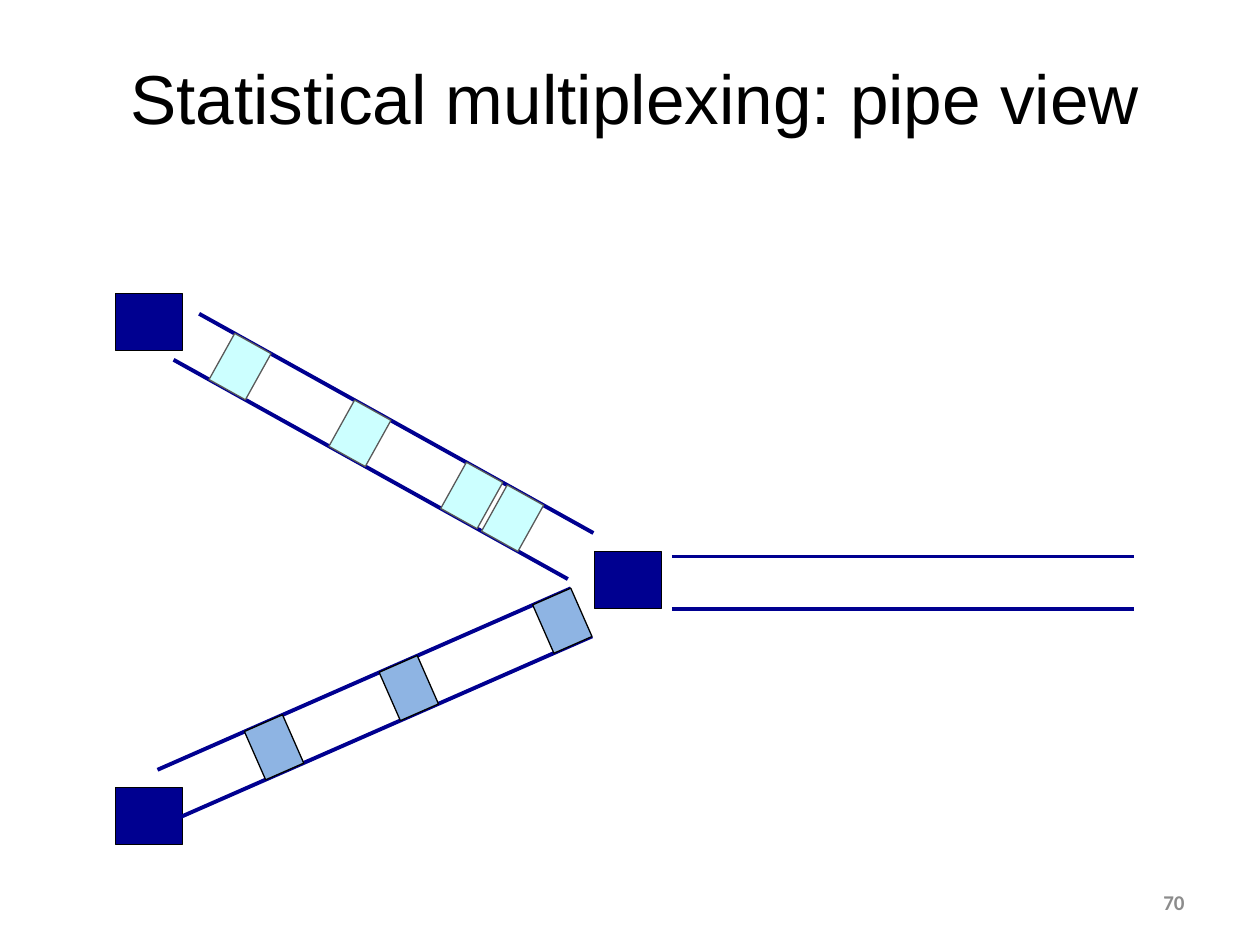
import math

import pptx
import pptx.util
import pptx.dml.color
import pptx.enum.shapes
import pptx.enum.text
import pptx.oxml.ns
from lxml import etree

Pt = pptx.util.Pt
ALIGN = pptx.enum.text.PP_ALIGN

COLORS = {
    "navy": "000090",
    "black": "000000",
    "cyan": "CCFFFF",
    "gray": "595959",
    "blue": "8EB4E3",
    "number": "8C8C8C",
}

# Content, in points
TITLE = "Statistical multiplexing: pipe view"
PAGE_NUMBER = "70"
NODE_SIZE = (38.4, 32.4)
NODES = [(339.6, 315.2), (66, 167.8), (66, 450)]
PACKET_SIZE = (23.8, 30.2)
# A pipe has two parallel walls; packets are distances along its middle.
PIPES = [
    dict(start=(113.8, 179.3), end=(339.1, 304.6), gap=(-14.6, 26.3),
         packets=[213.3, 186.6, 113.5, 35.1], fill="cyan", outline="gray"),
    dict(start=(90, 439.9), end=(326.2, 336.2), gap=(12.2, 27.4),
         packets=[66.1, 246, 150.2], fill="blue", outline="black"),
    dict(start=(384, 318), end=(642, 318), gap=(0, 30)),
    dict(start=(390, 318), end=(648, 318), gap=(0, 30)),
]


def rgb(name):
    return pptx.dml.color.RGBColor.from_string(COLORS[name])


def add_text(slide, text, left, top, width, height, *, size, font, color,
             align, bold=False):
    box = slide.shapes.add_textbox(Pt(left), Pt(top), Pt(width), Pt(height))
    frame = box.text_frame
    frame.word_wrap = True
    frame.vertical_anchor = pptx.enum.text.MSO_ANCHOR.MIDDLE
    paragraph = frame.paragraphs[0]
    paragraph.alignment = align
    run = paragraph.add_run()
    run.text = text
    run.font.size = Pt(size)
    run.font.name = font
    run.font.bold = bold
    run.font.color.rgb = rgb(color)


def add_block(shapes, left, top, size, fill, outline, rotation=0):
    block = shapes.add_shape(pptx.enum.shapes.MSO_SHAPE.RECTANGLE,
                             Pt(left), Pt(top), Pt(size[0]), Pt(size[1]))
    block.shadow.inherit = False
    block.fill.solid()
    block.fill.fore_color.rgb = rgb(fill)
    block.line.color.rgb = rgb(outline)
    block.line.width = Pt(0.75)
    block.rotation = rotation


def add_wall(shapes, x1, y1, x2, y2):
    wall = shapes.add_connector(pptx.enum.shapes.MSO_CONNECTOR.STRAIGHT,
                                Pt(x1), Pt(y1), Pt(x2), Pt(y2))
    wall.line.color.rgb = rgb("navy")
    wall.line.width = Pt(2.25)
    etree.SubElement(wall._element.spPr, pptx.oxml.ns.qn("a:effectLst"))


def add_pipe(slide, start, end, gap, packets=(), fill=None, outline=None):
    shapes = slide.shapes.add_group_shape().shapes
    (x1, y1), (x2, y2), (gap_x, gap_y) = start, end, gap
    for side in (0, 1):
        dx, dy = side * gap_x, side * gap_y
        add_wall(shapes, x1 + dx, y1 + dy, x2 + dx, y2 + dy)

    angle = math.atan2(y2 - y1, x2 - x1)
    width, height = PACKET_SIZE
    for distance in packets:
        center_x = x1 + gap_x / 2 + distance * math.cos(angle)
        center_y = y1 + gap_y / 2 + distance * math.sin(angle)
        add_block(shapes, center_x - width / 2, center_y - height / 2,
                  PACKET_SIZE, fill, outline, math.degrees(angle))


def main():
    deck = pptx.Presentation()
    deck.slide_width, deck.slide_height = Pt(720), Pt(540)
    slide = deck.slides.add_slide(deck.slide_layouts[6])

    # Title
    add_text(slide, TITLE, 36, 9.4, 653.8, 92.2, size=39.6, font="Arial",
             color="black", align=ALIGN.CENTER)

    # Nodes
    for left, top in NODES:
        add_block(slide.shapes, left, top, NODE_SIZE, "navy", "black")

    # Pipes with their packets
    for pipe in PIPES:
        add_pipe(slide, **pipe)

    # Page number
    add_text(slide, PAGE_NUMBER, 516, 501, 168, 28.8, size=12, font="Calibri",
             color="number", align=ALIGN.RIGHT, bold=True)

    deck.save("out.pptx")


if __name__ == "__main__":
    main()
